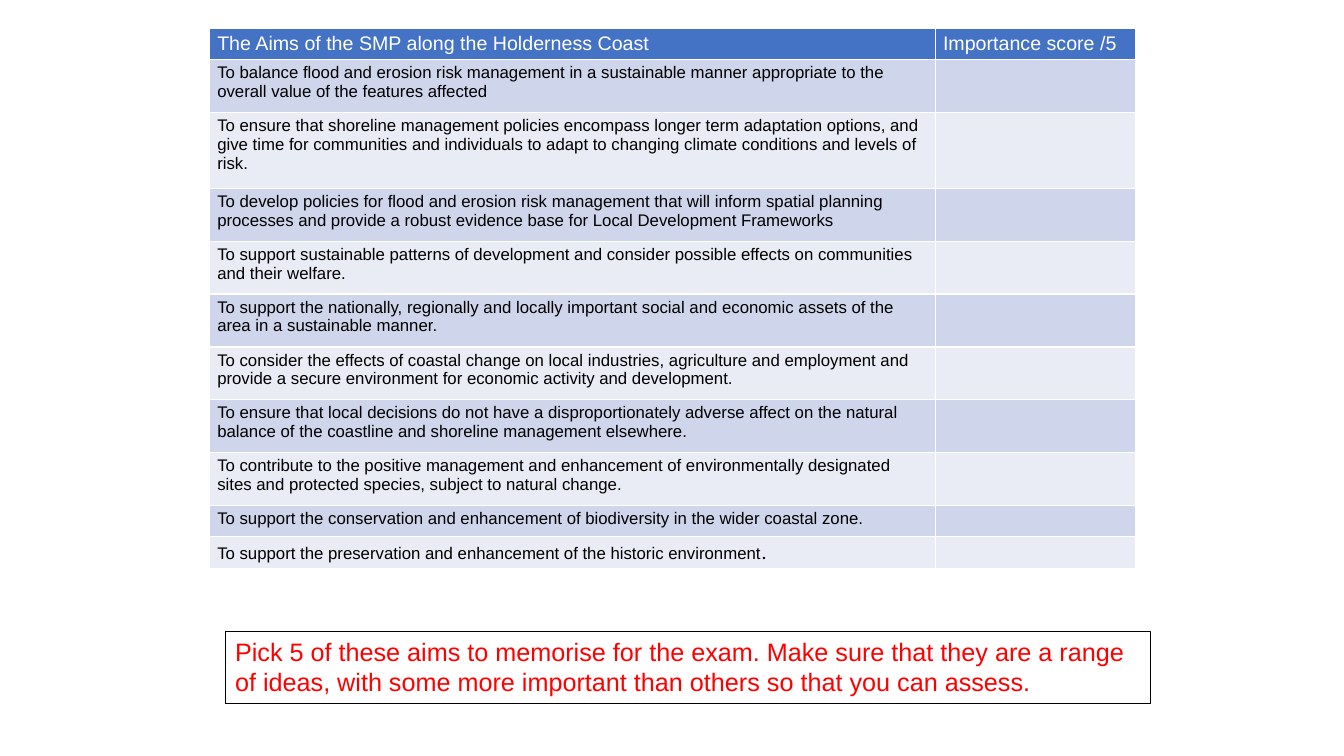
from lxml.etree import SubElement
from pptx import Presentation
from pptx.dml.color import RGBColor
from pptx.enum.shapes import MSO_SHAPE
from pptx.enum.text import MSO_ANCHOR, PP_ALIGN
from pptx.oxml.ns import qn
from pptx.util import Pt

HEADINGS = ("The Aims of the SMP along the Holderness Coast", "Importance score /5")
AIMS = (
    "To balance flood and erosion risk management in a sustainable manner appropriate to the overall value of the features affected",
    "To ensure that shoreline management policies encompass longer term adaptation options, and give time for communities and individuals to adapt to changing climate conditions and levels of risk.",
    "To develop policies for flood and erosion risk management that will inform spatial planning processes and provide a robust evidence base for Local Development Frameworks",
    "To support sustainable patterns of development and consider possible effects on communities and their welfare.",
    "To support the nationally, regionally and locally important social and economic assets of the area in a sustainable manner.",
    "To consider the effects of coastal change on local industries, agriculture and employment and provide a secure environment for economic activity and development.",
    "To ensure that local decisions do not have a disproportionately adverse affect on the natural balance of the coastline and shoreline management elsewhere.",
    "To contribute to the positive management and enhancement of environmentally designated sites and protected species, subject to natural change.",
    "To support the conservation and enhancement of biodiversity in the wider coastal zone.",
    "To support the preservation and enhancement of the historic environment",
)
TASK = "Pick 5 of these aims to memorise for the exam. Make sure that they are a range of ideas, with some more important than others so that you can assess."
COLUMN_WIDTHS = (518.4, 143.2)
HEADER_HEIGHT = 22.2
AIM_HEIGHTS = (37.8, 54.2) + (37.8,) * 6 + (22.2, 22.2)
BANDS = ("CFD5EA", "E9EBF5")


def paint(target, colour):
    """Give a fill or a line a solid colour."""
    target.fill.solid()
    target.fill.fore_color.rgb = RGBColor.from_string(colour)


def add_span(para, text, size, colour, font="Arial"):
    """Append one formatted run to a paragraph."""
    span = para.add_run()
    span.text = text
    span.font.name = font
    span.font.size = Pt(size)
    span.font.bold = False
    span.font.color.rgb = RGBColor.from_string(colour)


def style_cell(cell, colour):
    """Fill a cell, set its margins and return its paragraph."""
    paint(cell, colour)
    cell.margin_left = cell.margin_right = Pt(5.4)
    cell.margin_top = cell.margin_bottom = Pt(2.7)
    return cell.text_frame.paragraphs[0]


def add_aims_table(page):
    """Add the table of aims with an empty score column."""
    heights = (HEADER_HEIGHT,) + AIM_HEIGHTS
    table = page.shapes.add_table(
        len(heights), len(COLUMN_WIDTHS), Pt(149.8), Pt(20.3),
        Pt(sum(COLUMN_WIDTHS)), Pt(sum(heights)),
    ).table
    for column, width in zip(table.columns, COLUMN_WIDTHS):
        column.width = Pt(width)
    for row, height in zip(table.rows, heights):
        row.height = Pt(height)
    for index, heading in enumerate(HEADINGS):
        add_span(style_cell(table.cell(0, index), "4472C4"), heading, 14, "FFFFFF")
    for index, aim in enumerate(AIMS):
        band = BANDS[index % 2]
        para = style_cell(table.cell(index + 1, 0), band)
        add_span(para, aim, 12, "000000")
        score = style_cell(table.cell(index + 1, 1), band)
        SubElement(score._p, qn("a:endParaRPr"), sz="1200")
    add_span(para, ".", 14, "000000", "Calibri")


def add_task_box(page):
    """Add the outlined box with the task for the class."""
    box = page.shapes.add_shape(
        MSO_SHAPE.RECTANGLE, Pt(160.8), Pt(451.1), Pt(661), Pt(51.2))
    box.shadow.inherit = False
    box.fill.background()
    paint(box.line, "000000")
    box.line.width = Pt(0.75)
    frame = box.text_frame
    frame.word_wrap = True
    frame.vertical_anchor = MSO_ANCHOR.TOP
    para = frame.paragraphs[0]
    para.alignment = PP_ALIGN.LEFT
    add_span(para, TASK, 18, "FF0000")


def main():
    """Build the slide and save it."""
    deck = Presentation()
    deck.slide_width, deck.slide_height = Pt(960), Pt(540)
    page = deck.slides.add_slide(deck.slide_layouts[6])
    add_aims_table(page)
    add_task_box(page)
    deck.save("out.pptx")


if __name__ == "__main__":
    main()
